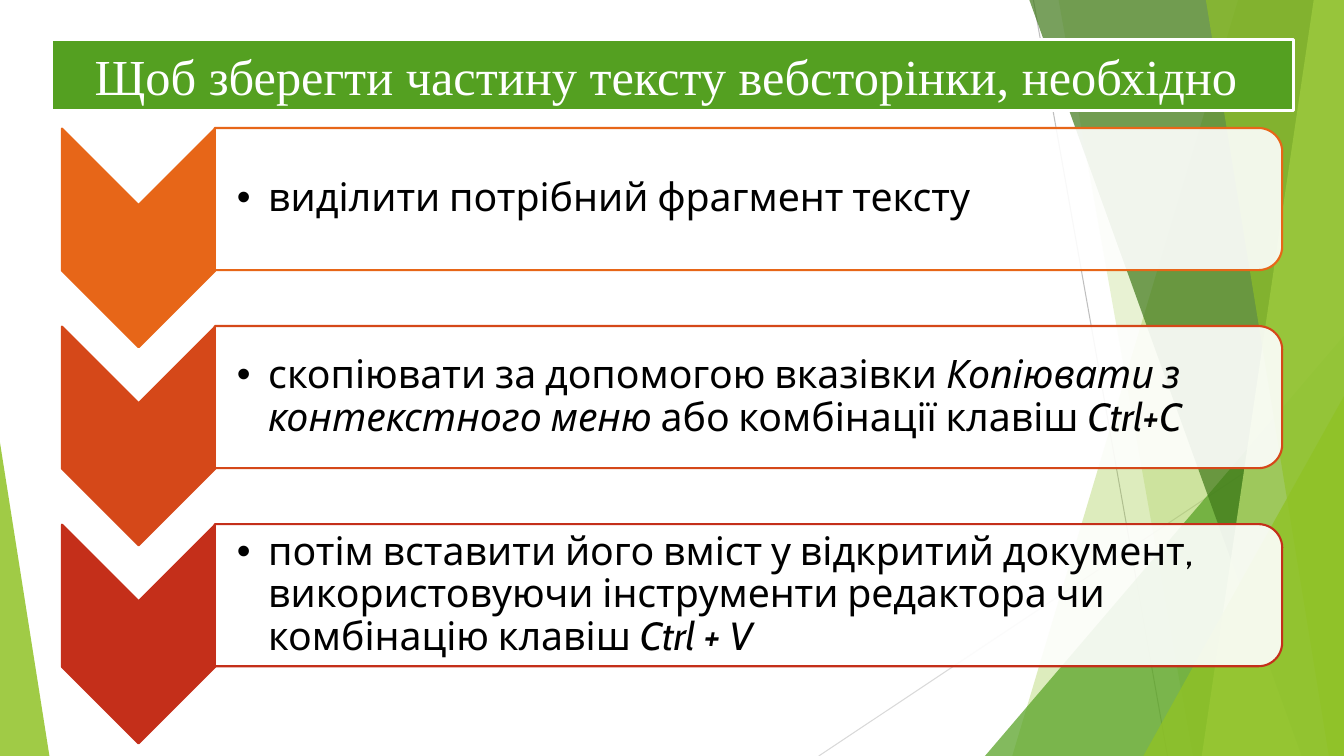
"""Build the slide on saving part of a web page's text."""
from lxml import etree
from pptx import Presentation
from pptx import util as u
from pptx.dml.color import RGBColor
from pptx.enum import shapes, text
from pptx.oxml import ns

WIDE, HIGH = u.Inches(13.33), u.Inches(7.5)
KIND = shapes.MSO_SHAPE
WHITE = RGBColor(0xFF, 0xFF, 0xFF)
BLACK = RGBColor(0, 0, 0)
LIME = RGBColor(0x90, 0xC2, 0x26)
GREEN = RGBColor(0x54, 0xA0, 0x21)
DARK = RGBColor(0x3F, 0x78, 0x19)
PALE = RGBColor(0xC0, 0xE4, 0x74)
GRAY = RGBColor(0xBF, 0xBF, 0xBF)
SILVER = RGBColor(0xD9, 0xD9, 0xD9)
ORANGE = RGBColor(0xE7, 0x66, 0x18)
RUST = RGBColor(0xD5, 0x48, 0x19)
RED = RGBColor(0xC4, 0x2F, 0x1A)
PITCH = 26.2

STEPS = [
    (ORANGE, [("виділити потрібний фрагмент тексту", False)]),
    (RUST, [("скопіювати за допомогою вказівки ", False),
            ("Копіювати з контекстного меню ", True),
            ("або комбінації клавіш ", False),
            ("Ctrl+C", True)]),
    (RED, [("потім вставити його вміст у відкритий документ, "
            "використовуючи інструменти редактора чи "
            "комбінацію клавіш ", False),
           ("Ctrl + V", True)]),
]


def across(share):
    """Turn a percentage of the slide's width into a length."""
    return round(WIDE * share / 100)


def down(share):
    """Turn a percentage of the slide's height into a length."""
    return round(HIGH * share / 100)


def frame(left, top, width, height):
    """Turn a box given in percentages into lengths."""
    return across(left), down(top), across(width), down(height)


def child(node, tag, **attrs):
    """Append a drawing element to a node."""
    return etree.SubElement(node, ns.qn(tag), **attrs)


def paint(shape, fill, alpha=100, edge=None, weight=1.5):
    """Set a shape's fill, opacity and outline."""
    shape.shadow.inherit = False
    shape.fill.solid()
    shape.fill.fore_color.rgb = fill
    if alpha < 100:
        color = shape.fill._xPr.find(".//" + ns.qn("a:srgbClr"))
        child(color, "a:alpha", val=str(alpha * 1000))
    if edge is None:
        shape.line.fill.background()
    else:
        shape.line.color.rgb = edge
        shape.line.width = u.Pt(weight)


def ray(slide, start, end, color):
    """Draw a thin background line."""
    line = slide.shapes.add_connector(
        shapes.MSO_CONNECTOR.STRAIGHT, across(start[0]), down(start[1]),
        across(end[0]), down(end[1]))
    line.line.color.rgb = color
    line.line.width = u.Pt(0.75)
    child(line._element.spPr, "a:effectLst")


def facet(slide, top, base, color, alpha):
    """Draw a slanted panel that reaches the right edge."""
    pen = slide.shapes.build_freeform(across(top), 0)
    pen.add_line_segments([(WIDE, 0), (WIDE, HIGH), (across(base), HIGH)])
    paint(pen.convert_to_shape(), color, alpha)


def wedge(slide, left, top, width, apex, color, alpha):
    """Draw a right triangle that stands on the bottom edge."""
    shape = slide.shapes.add_shape(
        KIND.ISOSCELES_TRIANGLE, *frame(left, top, width, 100 - top))
    shape.adjustments[0] = apex
    paint(shape, color, alpha)


def turned(slide, kind, box):
    """Add a shape turned a quarter that fills the box as seen."""
    left, top, width, height = box
    shift = (width - height) // 2
    shape = slide.shapes.add_shape(
        kind, left + shift, top - shift, height, width)
    shape.rotation = 90
    return shape


def write(para, words, font, size, color, slant=None):
    """Add one run of text."""
    run = para.add_run()
    run.text = words
    run.font.name, run.font.size = font, u.Pt(size)
    run.font.color.rgb = color
    run.font.italic = slant


def bullet(para):
    """Give a paragraph its bullet, indent and spacing."""
    para.level = 1
    para.line_spacing = 0.9
    props = para._p.get_or_add_pPr()
    props.set("marL", str(u.Inches(0.31)))
    props.set("indent", str(-u.Inches(0.31)))
    child(child(props, "a:spcAft"), "a:spcPct", val="15000")
    child(props, "a:buFont", typeface="Arial")
    child(props, "a:buChar", char="•")


def step(slide, row, color, runs):
    """Draw one step: chevron, panel and bulleted text."""
    drop = row * PITCH
    arrow = turned(slide, KIND.CHEVRON, frame(4.61, 17 + drop, 11.4, 28.93))
    paint(arrow, color, edge=color)
    panel = turned(slide, KIND.ROUND_2_SAME_RECTANGLE,
                   frame(15.98, 16.93 + drop, 79.42, 18.8))
    paint(panel, WHITE, 90, color)
    body = slide.shapes.add_textbox(
        *frame(15.98, 17.87 + drop, 78.9, 16.93)).text_frame
    body.word_wrap = True
    body.vertical_anchor = text.MSO_ANCHOR.MIDDLE
    body.margin_left = u.Inches(0.22)
    body.margin_top = body.margin_right = body.margin_bottom = u.Inches(0.02)
    para = body.paragraphs[0]
    bullet(para)
    for words, slant in runs:
        write(para, words, "Cabin", 28, BLACK, slant)


def title(slide, words):
    """Draw the heading bar."""
    bar = slide.shapes.add_shape(
        KIND.RECTANGLE, *frame(3.83, 5.2, 92.42, 9.47))
    paint(bar, GREEN, edge=WHITE, weight=2)
    body = bar.text_frame
    body.word_wrap = True
    body.auto_size = text.MSO_AUTO_SIZE.SHAPE_TO_FIT_TEXT
    body.vertical_anchor = text.MSO_ANCHOR.MIDDLE
    para = body.paragraphs[0]
    para.alignment = text.PP_ALIGN.CENTER
    write(para, words, "Times New Roman", 36, WHITE)


def scene(slide):
    """Draw the faceted background."""
    ray(slide, (76.89, 0), (86.87, 100), GRAY)
    ray(slide, (100, 53.73), (60.92, 100), SILVER)
    facet(slide, 92.12, 75.32, LIME, 30)
    facet(slide, 78.77, 88.75, LIME, 20)
    wedge(slide, 73.29, 44.4, 26.71, 1, GREEN, 72)
    facet(slide, 76.59, 96.85, DARK, 70)
    facet(slide, 97.75, 89.42, PALE, 70)
    facet(slide, 89.72, 98.87, LIME, 65)
    wedge(slide, 85.07, 52.4, 14.93, 1, LIME, 80)
    wedge(slide, 0, 58.53, 3.68, 0, LIME, 85)


def main():
    """Build and save the slide."""
    deck = Presentation()
    deck.slide_width, deck.slide_height = WIDE, HIGH
    slide = deck.slides.add_slide(deck.slide_layouts[6])
    scene(slide)
    for row, (color, runs) in enumerate(STEPS):
        step(slide, row, color, runs)
    title(slide, "Щоб зберегти частину тексту вебсторінки, необхідно ")
    deck.save("out.pptx")


if __name__ == "__main__":
    main()
